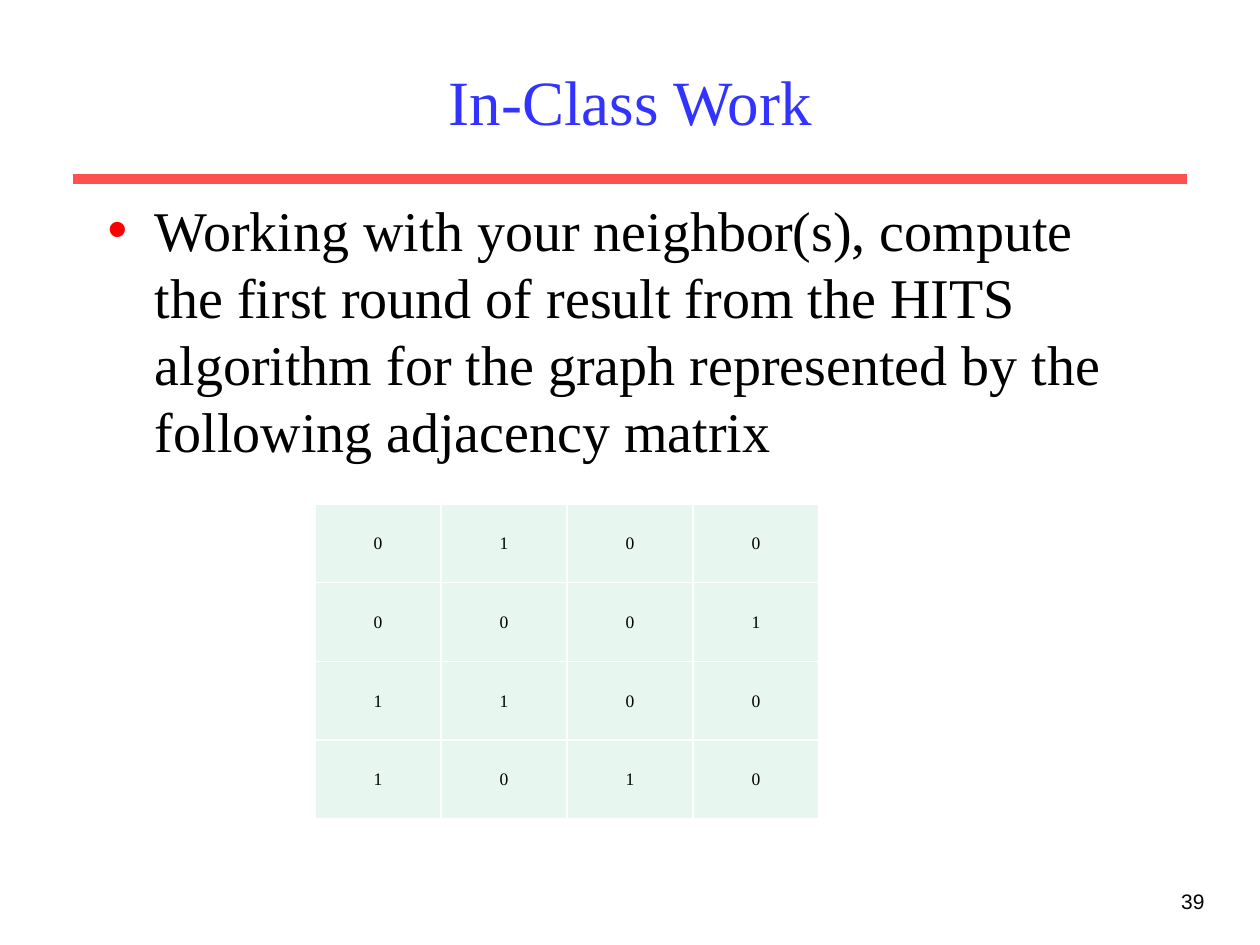
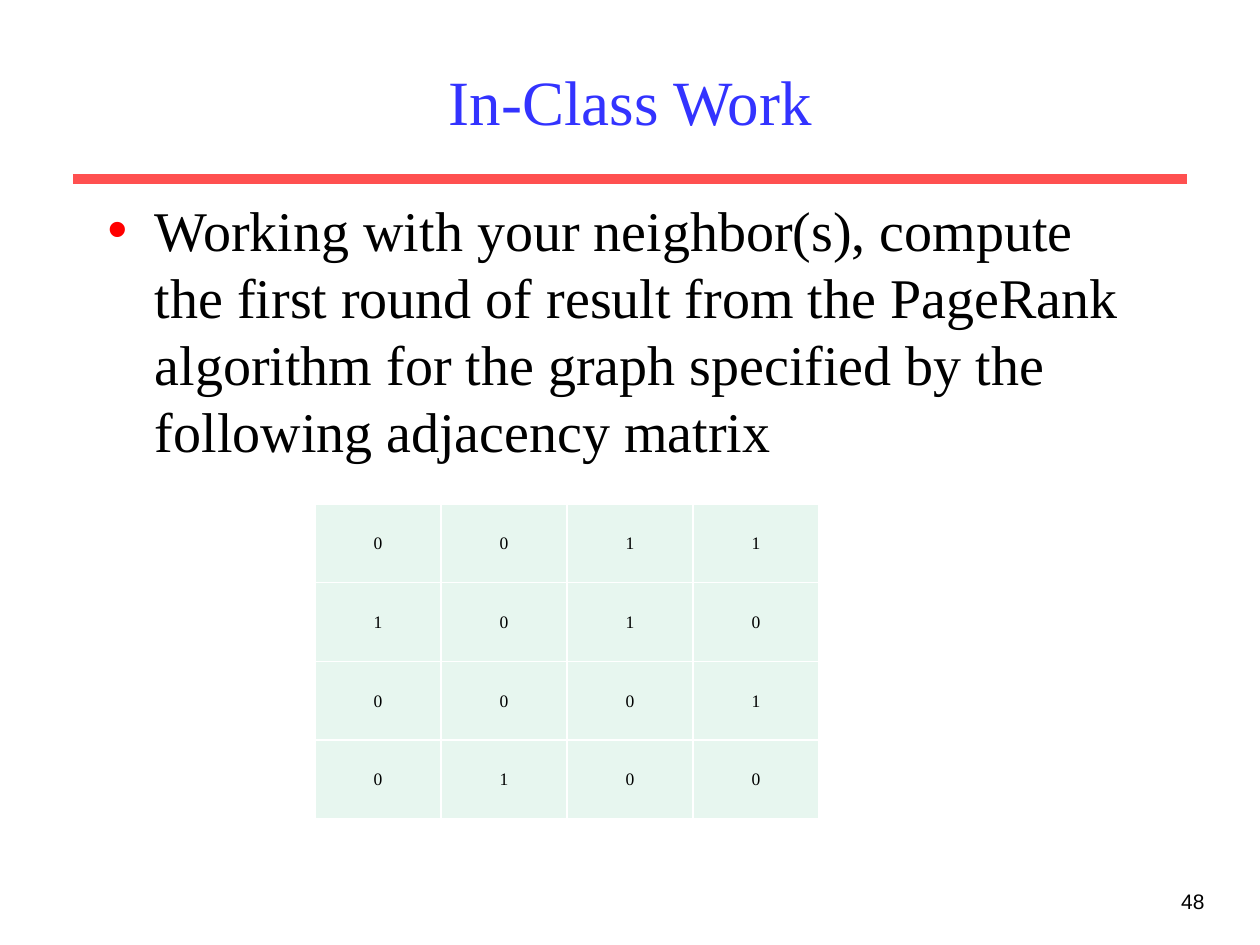
from dataclasses import dataclass

from lxml import etree
from pptx import Presentation
from pptx.dml.color import RGBColor
from pptx.enum.shapes import MSO_CONNECTOR
from pptx.enum.text import MSO_ANCHOR, MSO_AUTO_SIZE, PP_ALIGN
from pptx.oxml.ns import qn
from pptx.slide import Slide
from pptx.text.text import TextFrame
from pptx.util import Emu, Pt

STRAIGHT = MSO_CONNECTOR.STRAIGHT
MIDDLE, TOP = MSO_ANCHOR.MIDDLE, MSO_ANCHOR.TOP
LEFT, CENTER, RIGHT = PP_ALIGN.LEFT, PP_ALIGN.CENTER, PP_ALIGN.RIGHT
FIXED = MSO_AUTO_SIZE.NONE
SCALE = 914400 / 126
WIDTH, HEIGHT = 1260, 945


@dataclass(frozen=True)
class Theme:
    serif: str = "Times New Roman"
    sans: str = "Arial"
    title: str = "3333FF"
    ink: str = "000000"
    rule: str = "FF5050"
    bullet: str = "FF0000"
    cell: str = "E7F6EF"
    grid: str = "FFFFFF"
    title_size: int = 36
    body_size: int = 32
    page_size: int = 12
    cell_size: int = 10
    rule_width: int = 6
    grid_width: int = 1


@dataclass(frozen=True)
class Box:
    left: int
    top: int
    width: int
    height: int

    def emu(self) -> tuple[Emu, ...]:
        return tuple(px(n) for n in (self.left, self.top, self.width, self.height))


@dataclass(frozen=True)
class Task:
    method: str
    verb: str
    page: int
    matrix: tuple[str, ...]


THEME = Theme()
TITLE_BOX = Box(95, 32, 1071, 136)
BODY_BOX = Box(95, 189, 1071, 646)
PAGE_BOX = Box(955, 882, 262, 63)
TABLE_BOX = Box(315, 504, 504, 315)
RULE_LEFT, RULE_RIGHT, RULE_TOP = 73, 1187, 179

TASKS = (
    Task("HITS", "represented", 39, ("0100", "0001", "1100", "1010")),
    Task("PageRank", "specified", 48, ("0011", "1010", "0001", "0100")),
)


def px(count: int) -> Emu:
    return Emu(round(count * SCALE))


def write(frame: TextFrame, text: str, *, size: int, face: str = THEME.serif,
          color: str = THEME.ink, align: PP_ALIGN = LEFT) -> None:
    frame.text = text
    para = frame.paragraphs[0]
    para.alignment = align
    font = para.runs[0].font
    font.size = Pt(size)
    font.name = face
    font.color.rgb = RGBColor.from_string(color)


def place(shape, box: Box, anchor: MSO_ANCHOR) -> TextFrame:
    shape.left, shape.top, shape.width, shape.height = box.emu()
    frame = shape.text_frame
    frame.word_wrap = True
    frame.auto_size = FIXED
    frame.vertical_anchor = anchor
    return frame


def add_color(parent, color: str) -> None:
    etree.SubElement(parent, qn("a:srgbClr"), val=color)


def draw_rule(slide: Slide) -> None:
    line = slide.shapes.add_connector(
        STRAIGHT, px(RULE_LEFT), px(RULE_TOP), px(RULE_RIGHT), px(RULE_TOP))
    line.line.color.rgb = RGBColor.from_string(THEME.rule)
    line.line.width = Pt(THEME.rule_width)
    etree.SubElement(line._element.spPr, qn("a:effectLst"))


def draw_title(slide: Slide) -> None:
    frame = place(slide.shapes.title, TITLE_BOX, MIDDLE)
    write(frame, "In-Class Work", size=THEME.title_size,
          color=THEME.title, align=CENTER)


def draw_body(slide: Slide, task: Task) -> None:
    frame = place(slide.placeholders[1], BODY_BOX, TOP)
    write(frame, "Working with your neighbor(s), compute the first round of result "
          f"from the {task.method} algorithm for the graph {task.verb} by the "
          "following adjacency matrix", size=THEME.body_size)
    props = frame.paragraphs[0]._p.get_or_add_pPr()
    add_color(etree.SubElement(props, qn("a:buClr")), THEME.bullet)


def draw_page(slide: Slide, page: int) -> None:
    frame = place(slide.shapes.add_textbox(*PAGE_BOX.emu()), PAGE_BOX, TOP)
    write(frame, str(page), size=THEME.page_size, face=THEME.sans, align=RIGHT)


def style_cell(cell) -> None:
    cell.vertical_anchor = MIDDLE
    cell.margin_left = cell.margin_right = cell.margin_top = px(1)
    cell.margin_bottom = px(0)
    props = cell._tc.get_or_add_tcPr()
    for side in ("a:lnL", "a:lnR", "a:lnT", "a:lnB"):
        edge = etree.SubElement(props, qn(side), w=str(Pt(THEME.grid_width)))
        add_color(etree.SubElement(edge, qn("a:solidFill")), THEME.grid)
    cell.fill.solid()
    cell.fill.fore_color.rgb = RGBColor.from_string(THEME.cell)


def draw_matrix(slide: Slide, matrix: tuple[str, ...]) -> None:
    table = slide.shapes.add_table(
        len(matrix), len(matrix[0]), *TABLE_BOX.emu()).table
    table.first_row = table.horz_banding = False
    for row, digits in enumerate(matrix):
        for col, digit in enumerate(digits):
            cell = table.cell(row, col)
            write(cell.text_frame, digit, size=THEME.cell_size, align=CENTER)
            style_cell(cell)


def main() -> None:
    deck = Presentation()
    deck.slide_width, deck.slide_height = px(WIDTH), px(HEIGHT)
    for task in TASKS:
        slide = deck.slides.add_slide(deck.slide_layouts[1])
        draw_rule(slide)
        draw_title(slide)
        draw_body(slide, task)
        draw_page(slide, task.page)
        draw_matrix(slide, task.matrix)
    deck.save("out.pptx")


if __name__ == "__main__":
    main()
